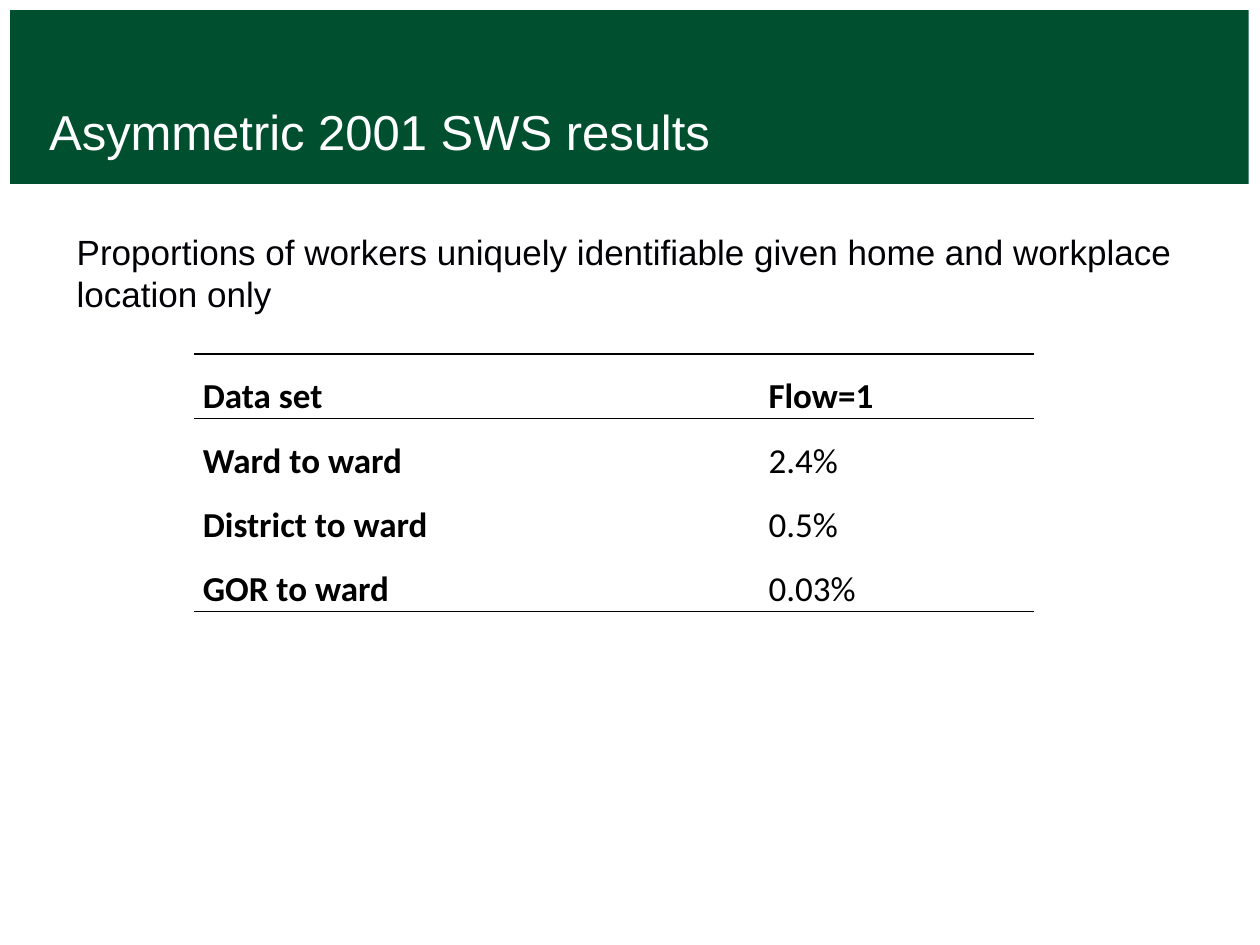
from lxml.etree import SubElement
from pptx import Presentation
from pptx.dml.color import RGBColor
from pptx.enum.shapes import MSO_SHAPE
from pptx.enum.text import MSO_ANCHOR, MSO_AUTO_SIZE, PP_ALIGN
from pptx.oxml.ns import qn
from pptx.util import Inches, Pt

GREEN, WHITE, BLACK, INK = "00502F", "FFFFFF", "000000", "000005"


def color(value):
    return RGBColor.from_string(value)


class SlideBuilder:
    heading_font = "Arial"
    table_font = "Calibri"
    text_size = 20
    row_height = 0.51

    def __init__(self, presentation):
        self.slide = presentation.slides.add_slide(presentation.slide_layouts[5])

    def format_text(self, paragraph, font_name, size, ink, bold=False):
        for run in paragraph.runs:
            run.font.name = font_name
            run.font.size = Pt(size)
            run.font.bold = bold
            run.font.color.rgb = color(ink)

    def title(self, text, left, top, width, height):
        title = self.slide.shapes.title
        title.left, title.top = Inches(left), Inches(top)
        title.width, title.height = Inches(width), Inches(height)
        frame = title.text_frame
        frame.text = text
        frame.word_wrap = True
        frame.auto_size = MSO_AUTO_SIZE.NONE
        frame.vertical_anchor = MSO_ANCHOR.BOTTOM
        frame.margin_left = frame.margin_right = 0
        frame.margin_top = frame.margin_bottom = 0
        frame.paragraphs[0].alignment = PP_ALIGN.LEFT
        self.format_text(frame.paragraphs[0], self.heading_font, 28, WHITE)

    def banner(self, left, top, width, height):
        banner = self.slide.shapes.add_shape(
            MSO_SHAPE.RECTANGLE, Inches(left), Inches(top), Inches(width), Inches(height))
        banner.shadow.inherit = False
        banner.fill.solid()
        banner.fill.fore_color.rgb = color(GREEN)
        banner.line.fill.background()
        # The banner lies behind the title
        self.slide.shapes.title.element.addprevious(banner.element)

    def text(self, text, left, top, width, height):
        box = self.slide.shapes.add_textbox(
            Inches(left), Inches(top), Inches(width), Inches(height))
        frame = box.text_frame
        frame.word_wrap = True
        frame.auto_size = MSO_AUTO_SIZE.SHAPE_TO_FIT_TEXT
        frame.text = text
        self.format_text(frame.paragraphs[0], self.heading_font, self.text_size, INK)

    def borders(self, cell, ruled_sides):
        properties = cell._tc.get_or_add_tcPr()
        for side in "LRTB":
            line = SubElement(properties, qn(f"a:ln{side}"), w=str(Pt(1)))
            if side in ruled_sides:
                fill = SubElement(line, qn("a:solidFill"))
                SubElement(fill, qn("a:srgbClr"), val=BLACK)
            else:
                SubElement(line, qn("a:noFill"))

    def table(self, rows, left, top, column_widths):
        table = self.slide.shapes.add_table(
            len(rows), len(column_widths), Inches(left), Inches(top),
            Inches(sum(column_widths)), Inches(self.row_height * len(rows))).table
        table.first_row = table.horz_banding = False
        for column, width in zip(table.columns, column_widths):
            column.width = Inches(width)
        # Rules above and below the header and below the last row
        ruled_sides = {0: "TB", 1: "T", len(rows) - 1: "B"}
        for row_index, values in enumerate(rows):
            table.rows[row_index].height = Inches(self.row_height)
            for column_index, value in enumerate(values):
                cell = table.cell(row_index, column_index)
                cell.margin_left = cell.margin_right = Inches(0.07)
                cell.margin_top = cell.margin_bottom = 0
                self.borders(cell, ruled_sides.get(row_index, ""))
                cell.fill.background()
                cell.text_frame.text = value
                paragraph = cell.text_frame.paragraphs[0]
                paragraph.alignment = PP_ALIGN.JUSTIFY
                paragraph.line_spacing = 1.5
                self.format_text(paragraph, self.table_font, self.text_size, BLACK,
                                 bold=row_index == 0 or column_index == 0)


def main():
    presentation = Presentation()
    presentation.slide_width, presentation.slide_height = Inches(10), Inches(7.5)
    builder = SlideBuilder(presentation)

    # Heading
    builder.banner(0.08, 0.08, 9.83, 1.38)
    builder.title("Asymmetric 2001 SWS results", 0.39, 0.46, 5.33, 0.81)

    # Results
    builder.table([
        ("Data set", "Flow=1"),
        ("Ward to ward", "2.4%"),
        ("District to ward", "0.5%"),
        ("GOR to ward", "0.03%"),
    ], 1.54, 2.81, (4.49, 2.18))

    # Introduction
    builder.text("Proportions of workers uniquely identifiable given home and "
                 "workplace location only", 0.51, 1.78, 9.21, 0.77)

    presentation.save("out.pptx")


if __name__ == "__main__":
    main()
